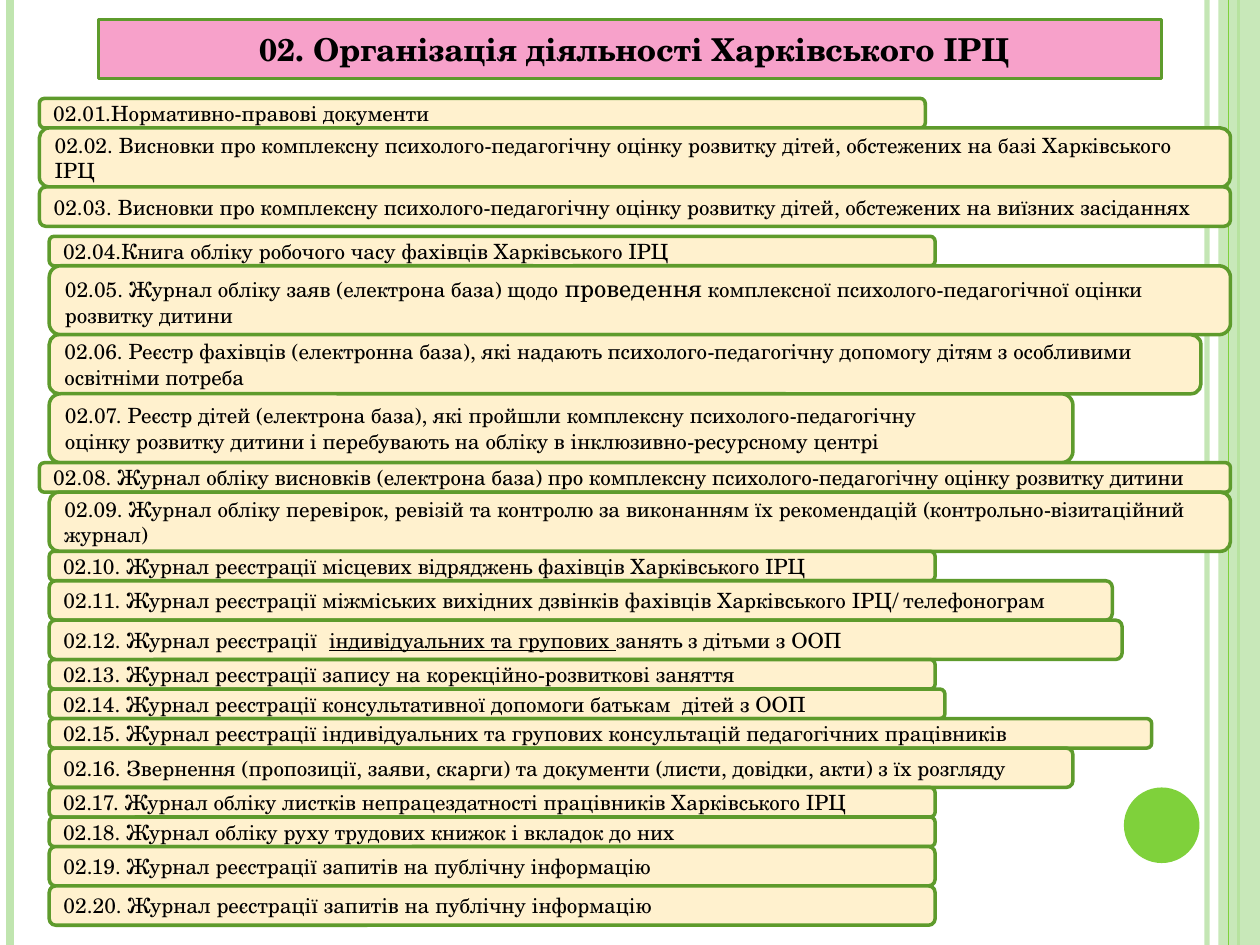
from dataclasses import dataclass

from lxml import etree
from pptx import Presentation
from pptx import util as u
from pptx.dml.color import RGBColor
from pptx.enum import shapes, text
from pptx.oxml import ns


@dataclass(frozen=True)
class Theme:
    font: str = "TeX Gyre Schola"
    ink: str = "000000"
    title_fill: str = "F7A1CA"
    row_fill: str = "FFF1CE"
    border: str = "5E9B2C"
    accent: str = "7FD13B"
    pale: str = "C0E5AF"
    title_size: int = 18
    row_size: int = 12
    large_size: int = 14
    border_width: int = 2


@dataclass(frozen=True)
class Row:
    """One register entry; left, width and height are in grid steps."""
    left: int
    width: int
    height: int
    text: str
    large: str = ""
    underlined: str = ""
    gap: int = 0


THEME = Theme()
STEP = u.Inches(10) / 128  # the slide is 128 grid steps wide

ROWS = [
    Row(4, 90, 3, "02.01.Нормативно-правові документи"),
    Row(4, 121, 6, "02.02. Висновки про комплексну психолого-педагогічну оцінку розвитку дітей, "
        "обстежених на базі Харківського ІРЦ"),
    Row(4, 121, 4, "02.03. Висновки про комплексну психолого-педагогічну оцінку розвитку дітей, "
        "обстежених на виїзних засіданнях"),
    Row(5, 90, 3, "02.04.Книга обліку робочого часу фахівців Харківського ІРЦ", gap=1),
    Row(5, 120, 7, "02.05. Журнал обліку заяв (електрона база) щодо проведення комплексної "
        "психолого-педагогічної оцінки розвитку дитини", large="проведення"),
    Row(5, 117, 6, "02.06. Реєстр фахівців (електронна база), які надають психолого-педагогічну "
        "допомогу дітям з особливими освітніми потреба"),
    Row(5, 104, 7, "02.07. Реєстр дітей (електрона база), які пройшли комплексну "
        "психолого-педагогічну \nоцінку розвитку дитини і перебувають на обліку "
        "в інклюзивно-ресурсному центрі"),
    Row(4, 121, 3, "02.08. Журнал обліку висновків (електрона база) про комплексну "
        "психолого-педагогічну оцінку розвитку дитини"),
    Row(5, 120, 6, "02.09. Журнал обліку перевірок, ревізій та контролю за виконанням "
        "їх рекомендацій (контрольно-візитаційний журнал)"),
    Row(5, 90, 3, "02.10. Журнал реєстрації місцевих відряджень фахівців Харківського ІРЦ"),
    Row(5, 108, 4, "02.11. Журнал реєстрації міжміських вихідних дзвінків фахівців "
        "Харківського ІРЦ/ телефонограм"),
    Row(5, 109, 4, "02.12. Журнал реєстрації  індивідуальних та групових занять з дітьми з ООП",
        underlined="індивідуальних та групових "),
    Row(5, 90, 3, "02.13. Журнал реєстрації запису на корекційно-розвиткові заняття"),
    Row(5, 91, 3, "02.14. Журнал реєстрації консультативної допомоги батькам  дітей з ООП"),
    Row(5, 112, 3, "02.15. Журнал реєстрації індивідуальних та групових консультацій "
        "педагогічних працівників"),
    Row(5, 104, 4, "02.16. Звернення (пропозиції, заяви, скарги) та документи "
        "(листи, довідки, акти) з їх розгляду"),
    Row(5, 90, 3, "02.17. Журнал обліку листків непрацездатності працівників Харківського ІРЦ"),
    Row(5, 90, 3, "02.18. Журнал обліку руху трудових книжок і вкладок до них"),
    Row(5, 90, 4, "02.19. Журнал реєстрації запитів на публічну інформацію"),
    Row(5, 90, 4, "02.20. Журнал реєстрації запитів на публічну інформацію"),
]


def color(value):
    return RGBColor.from_string(value)


def grid(*steps):
    return [round(step * STEP) for step in steps]


def paint(shape, fill, border=None):
    shape.fill.solid()
    shape.fill.fore_color.rgb = color(fill)
    if border:
        shape.line.color.rgb = color(border)
        shape.line.width = u.Pt(THEME.border_width)
    else:
        shape.line.fill.background()


def set_opacity(shape, percent):
    for fill in shape.element.spPr.iter(ns.qn("a:srgbClr")):
        etree.SubElement(fill, ns.qn("a:alpha"), val=str(percent * 1000))


def set_font(paragraph, size, bold=False):
    font = paragraph.font
    font.name, font.size, font.bold = THEME.font, u.Pt(size), bold
    font.color.rgb = color(THEME.ink)


def add_plain_shape(slide, kind, box, fill, border=None):
    shape = slide.shapes.add_shape(kind, *box)
    shape.shadow.inherit = False
    paint(shape, fill, border)
    return shape


def add_stripe(slide, x, height, line_color, width, opacity=100):
    stripe = slide.shapes.add_connector(
        shapes.MSO_CONNECTOR.STRAIGHT, u.Inches(x), 0, u.Inches(x), height)
    stripe.line.color.rgb = color(line_color)
    stripe.line.width = u.Pt(width)
    etree.SubElement(stripe.element.spPr, ns.qn("a:effectLst"))
    if opacity < 100:
        set_opacity(stripe, opacity)


def add_side_decoration(slide, height):
    # Vertical stripes, side band and dot
    add_stripe(slide, 9.58, height, THEME.pale, 3, 93)
    add_stripe(slide, 0.08, height, THEME.pale, 4.5)
    add_stripe(slide, 9.83, height, THEME.accent, 1.5)
    band = add_plain_shape(slide, shapes.MSO_SHAPE.RECTANGLE,
                           (u.Inches(9.67), 0, u.Inches(0.33), height), THEME.pale)
    set_opacity(band, 87)
    add_stripe(slide, 9.75, height, THEME.accent, 0.75)
    dot_box = [u.Inches(value) for value in (8.92, 6.25, 0.6, 0.6)]
    add_plain_shape(slide, shapes.MSO_SHAPE.OVAL, dot_box, THEME.accent)


def place_title(slide, box, wording):
    title = slide.shapes.title
    title.left, title.top, title.width, title.height = box
    paint(title, THEME.title_fill, THEME.border)
    frame = title.text_frame
    frame.text = wording
    frame.auto_size = text.MSO_AUTO_SIZE.NONE
    frame.vertical_anchor = text.MSO_ANCHOR.MIDDLE
    paragraph = frame.paragraphs[0]
    paragraph.alignment = text.PP_ALIGN.CENTER
    set_font(paragraph, THEME.title_size, bold=True)


def write_row(paragraph, row):
    special = row.large or row.underlined
    pieces = row.text.partition(special) if special else (row.text,)
    for piece in pieces:
        for index, line in enumerate(piece.split("\n")):
            if index:
                paragraph.add_line_break()
            run = paragraph.add_run()
            run.text = line
            if piece == row.large:
                run.font.size = u.Pt(THEME.large_size)
            elif piece == row.underlined:
                run.font.underline = True


def add_row(slide, box, row):
    shape = add_plain_shape(slide, shapes.MSO_SHAPE.ROUNDED_RECTANGLE, box,
                            THEME.row_fill, THEME.border)
    frame = shape.text_frame
    frame.word_wrap = True
    frame.vertical_anchor = text.MSO_ANCHOR.MIDDLE
    paragraph = frame.paragraphs[0]
    paragraph.alignment = text.PP_ALIGN.LEFT
    set_font(paragraph, THEME.row_size)
    write_row(paragraph, row)


def add_register(slide, top):
    # Rows stacked from the top down
    for row in ROWS:
        top += row.gap
        add_row(slide, grid(row.left, top, row.width, row.height), row)
        top += row.height


def main():
    presentation = Presentation()
    presentation.slide_width, presentation.slide_height = u.Inches(10), u.Inches(7.5)
    slide = presentation.slides.add_slide(presentation.slide_layouts[5])
    add_side_decoration(slide, presentation.slide_height)
    place_title(slide, grid(10, 2, 108, 6), " 02. Організація діяльності Харківського ІРЦ")
    add_register(slide, top=10)
    presentation.save("out.pptx")


if __name__ == "__main__":
    main()
